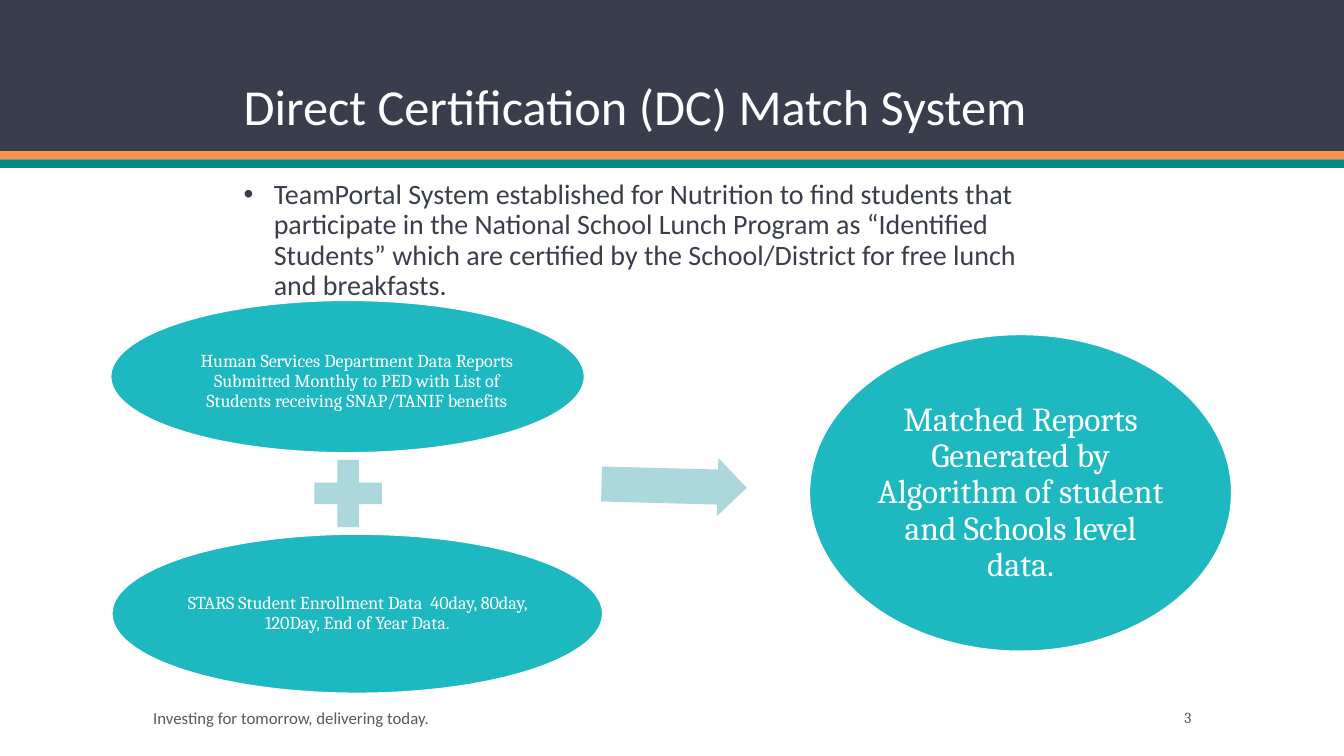
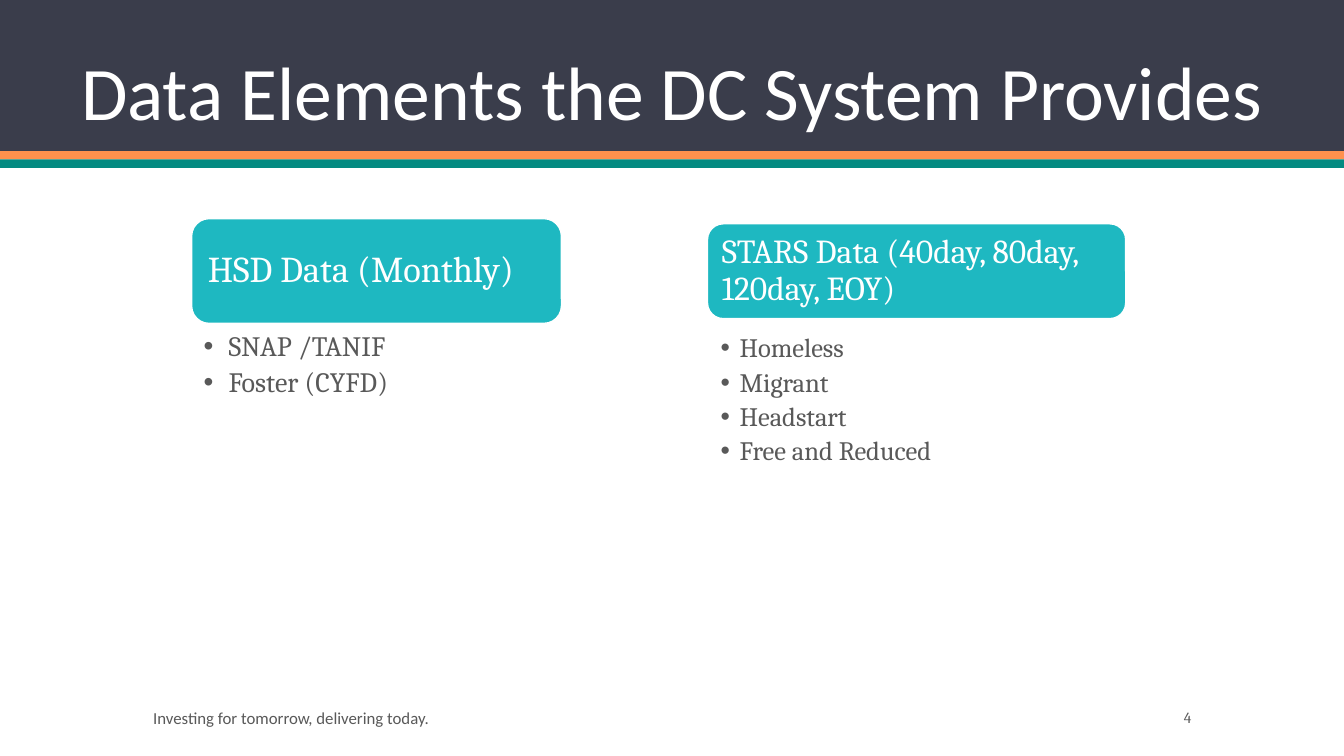
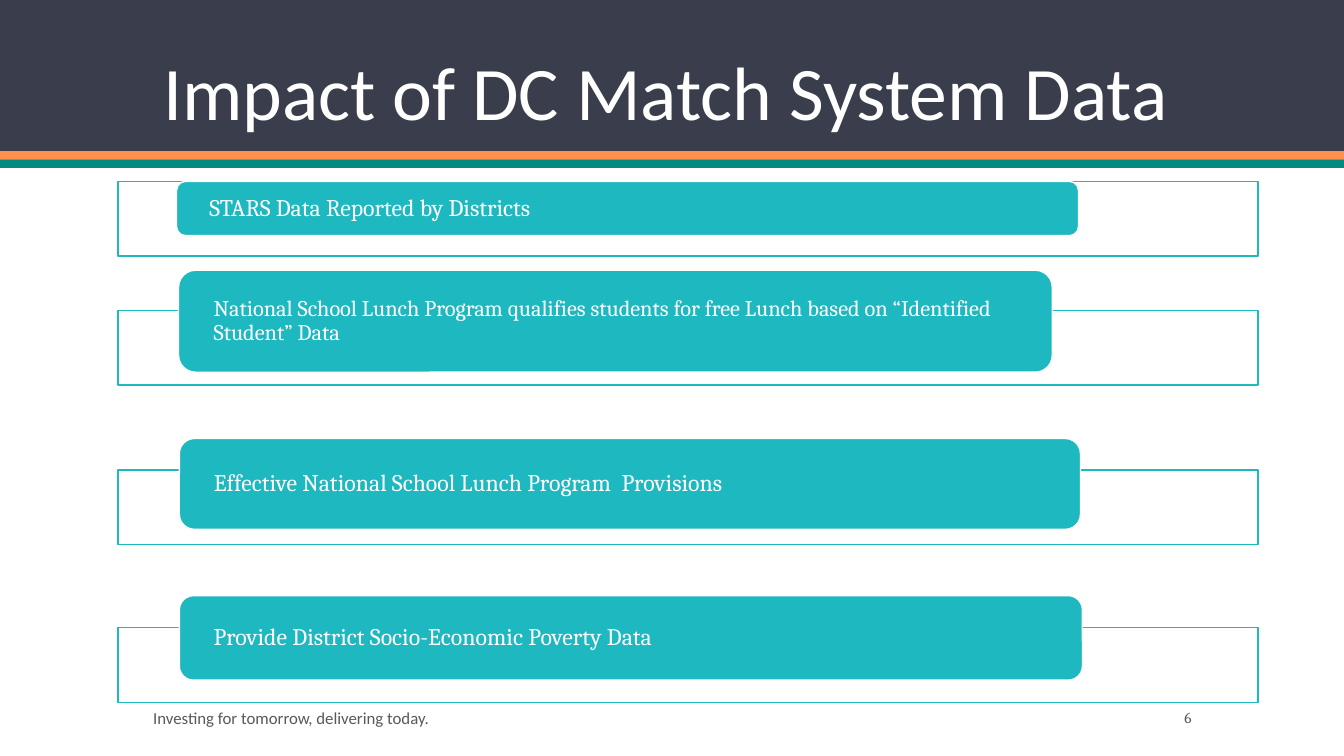
from collections import namedtuple

from lxml.etree import SubElement
from pptx import Presentation
from pptx.dml.color import RGBColor
from pptx.enum.shapes import MSO_SHAPE as Preset
from pptx.enum.text import MSO_ANCHOR as Anchor, MSO_AUTO_SIZE as AutoSize, PP_ALIGN as Align
from pptx.oxml.ns import qn
from pptx.util import Cm, Pt

COLORS = {
    "ink": "3A3D4B",
    "orange": "FF914D",
    "green": "048A81",
    "teal": "1EB8C1",
    "pale": "ACD8DD",
    "gray": "595959",
    "white": "FFFFFF",
}
WIDTH, HEIGHT = 33.87, 19.05
TAGLINE = "Investing for tomorrow, delivering today."

Box = namedtuple("Box", "left top width height")
Style = namedtuple("Style", "font size color align anchor spacing")

TITLE = Style("Calibri", 54, "white", Align.CENTER, Anchor.BOTTOM, 0.9)
BODY = Style("Calibri", 20, "ink", Align.LEFT, Anchor.TOP, 0.9)
FOOTER = Style("Calibri", 12, "gray", Align.LEFT, Anchor.MIDDLE, 1.0)
NUMBER = Style("Cambria", 11, "gray", Align.RIGHT, Anchor.MIDDLE, 1.0)
BUBBLE = Style("Cambria", 13, "white", Align.CENTER, Anchor.MIDDLE, 0.9)
LABEL = BUBBLE._replace(align=Align.LEFT)
LIST = Style("Cambria", 20, "gray", Align.LEFT, Anchor.TOP, 0.9)
DEFAULT_INSETS = (0.25, 0.13, 0.25, 0.13)


def rgb(name):
    return RGBColor.from_string(COLORS[name])


def apply(target, formats):
    for attribute, setting in formats.items():
        setattr(target, attribute, setting)


def place(box, left=0, top=0, width=None, height=None):
    return Box(
        box.left + left,
        box.top + top,
        box.width if width is None else width,
        box.height if height is None else height,
    )


def lengths(box):
    return [Cm(length) for length in box]


def write(holder, lines, style, insets=DEFAULT_INSETS, bullet_indent=0, gap=0):
    frame = holder.text_frame
    frame.text = "\n".join(lines)
    sides = ("margin_left", "margin_top", "margin_right", "margin_bottom")
    apply(frame, dict(zip(sides, map(Cm, insets))))
    apply(frame, {
        "word_wrap": True,
        "auto_size": AutoSize.NONE,
        "vertical_anchor": style.anchor,
    })
    for paragraph in frame.paragraphs:
        apply(paragraph, {
            "alignment": style.align,
            "line_spacing": style.spacing,
            "space_before": Pt(0),
            "space_after": Pt(gap),
        })
        font = paragraph.runs[0].font
        apply(font, {"name": style.font, "size": Pt(style.size)})
        font.color.rgb = rgb(style.color)
        if bullet_indent:
            add_bullet(paragraph, bullet_indent)


def add_bullet(paragraph, indent):
    properties = paragraph._p.get_or_add_pPr()
    properties.set("marL", str(Cm(indent)))
    properties.set("indent", str(-Cm(indent)))
    SubElement(properties, qn("a:buFont")).set("typeface", "Arial")
    SubElement(properties, qn("a:buChar")).set("char", "•")


def add_text(slide, box, lines, style, **options):
    holder = slide.shapes.add_textbox(*lengths(box))
    write(holder, lines, style, **options)
    return holder


def add_block(slide, preset, box, fill, outline=None):
    block = slide.shapes.add_shape(preset, *lengths(box))
    block.shadow.inherit = False
    block.fill.solid()
    block.fill.fore_color.rgb = rgb(fill)
    if outline:
        block.line.color.rgb = rgb(outline)
        block.line.width = Pt(1)
    else:
        block.line.fill.background()
    return block


def dress_layout(layout, slide):
    shared = []
    top = 0
    for color, height in (("ink", 3.81), ("orange", 0.21), ("green", 0.21)):
        shared.append(add_block(slide, Preset.RECTANGLE, Box(0, top, WIDTH, height), color))
        top += height
    shared.append(add_text(slide, Box(3.61, 17.7, 17.35, 0.76), [TAGLINE], FOOTER))
    for part in shared:
        layout.shapes.element.append(part.element)


def head_slide(slide, heading, number, box, style=TITLE):
    title = slide.shapes.title
    apply(title, dict(zip(Box._fields, lengths(box))))
    write(title, [heading], style)
    add_text(slide, Box(26.47, 17.7, 3.81, 0.76), [number], NUMBER)


def draw_match_flow(slide, box):
    bubbles = (
        (place(box, 0, 0, 11.94, 3.84), 13, (0.46, 0.25, 0, 0),
         "Human Services Department Data Reports Submitted Monthly to PED with List of "
         "Students receiving SNAP/TANIF benefits"),
        (place(box, 0.03, 5.89, 12.37, 4.01), 13, (0.05,) * 4,
         "STARS Student Enrollment Data  40day, 80day, 120Day, End of Year Data."),
        (place(box, 17.61, 0.86, 10.64, 7.98), 24, (0.08,) * 4,
         "Matched Reports Generated by Algorithm of student and Schools level data."),
    )
    for bubble_box, size, insets, wording in bubbles:
        bubble = add_block(slide, Preset.OVAL, bubble_box, "teal", "white")
        write(bubble, [wording], BUBBLE._replace(size=size), insets)
    add_block(slide, Preset.MATH_PLUS, place(box, 4.83, 3.71, 2.31, 2.31), "pale")
    arrow = add_block(slide, Preset.RIGHT_ARROW, place(box, 12.37, 3.94, 3.66, 1.47), "pale")
    arrow.rotation = 1.5
    arrow.adjustments[0] = 0.6


def draw_data_column(slide, box, heading, size, inset, items, list_format):
    header = add_block(slide, Preset.ROUNDED_RECTANGLE, box, "teal", "white")
    write(header, [heading], LABEL._replace(size=size), (inset,) * 4)
    item_size, drop, list_height, insets, indent = list_format
    add_text(slide, place(box, top=drop, height=list_height), items,
             LIST._replace(size=item_size), insets=insets, bullet_indent=indent, gap=4)


def draw_impact_row(slide, box, pill_box, wording, size):
    add_block(slide, Preset.RECTANGLE, box, "white", "teal")
    pill = add_block(slide, Preset.ROUNDED_RECTANGLE, place(box, *pill_box), "teal", "white")
    write(pill, [wording], LABEL._replace(size=size), (0.76, 0, 0.76, 0))


def build_match_system(slide):
    head_slide(slide, "Direct Certification (DC) Match System", "3",
               Box(5.89, 0.71, 21.21, 2.87), TITLE._replace(size=36, align=Align.LEFT))
    add_text(slide, Box(5.89, 4.42, 21.13, 4.55), [
        "TeamPortal System established for Nutrition to find students that participate in "
        "the National School Lunch Program as “Identified Students” which are certified by "
        "the School/District for free lunch and breakfasts."
    ], BODY, bullet_indent=0.76)
    draw_match_flow(slide, Box(2.79, 7.57, 28.25, 9.9))


def build_data_elements(slide):
    head_slide(slide, "Data Elements the DC System Provides", "4", Box(0, 0.71, WIDTH, 2.87))
    draw_data_column(slide, Box(4.83, 5.51, 9.32, 2.64), "HSD Data (Monthly)", 26, 0.28,
                     ["SNAP /TANIF", "Foster (CYFD)"],
                     (20, 2.77, 6.35, (0.3, 0.1, 0.5, 0.1), 0.63))
    draw_data_column(slide, Box(17.83, 5.64, 10.54, 2.39),
                     "STARS Data (40day, 80day, 120day, EOY)", 24, 0.25,
                     ["Homeless", "Migrant", "Headstart", "Free and Reduced"],
                     (19, 2.72, 4.6, (0.33, 0.08, 0.38, 0.08), 0.48))


def build_impact(slide):
    head_slide(slide, "Impact of DC Match System Data", "6", Box(0, 0.71, 33.55, 2.87))
    rows = (
        (4.57, (1.48, 0, 22.73, 1.37), "STARS Data Reported by Districts", 17),
        (7.82, (1.53, -1.01, 22.02, 2.57),
         "National School Lunch Program qualifies students for free Lunch based on "
         "“Identified Student” Data", 16),
        (11.84, (1.55, -0.79, 22.71, 2.29),
         "Effective National School Lunch Program  Provisions", 17),
        (15.82, (1.55, -0.81, 22.76, 2.13),
         "Provide District Socio-Economic Poverty Data", 17),
    )
    for top, pill_box, wording, size in rows:
        draw_impact_row(slide, Box(2.97, top, 28.73, 1.88), pill_box, wording, size)


def main():
    deck = Presentation()
    apply(deck, {"slide_width": Cm(WIDTH), "slide_height": Cm(HEIGHT)})
    layout = deck.slide_layouts[5]
    builders = (build_match_system, build_data_elements, build_impact)
    slides = [deck.slides.add_slide(layout) for _ in builders]
    dress_layout(layout, slides[0])
    for build, slide in zip(builders, slides):
        build(slide)
    deck.save("out.pptx")


if __name__ == "__main__":
    main()
